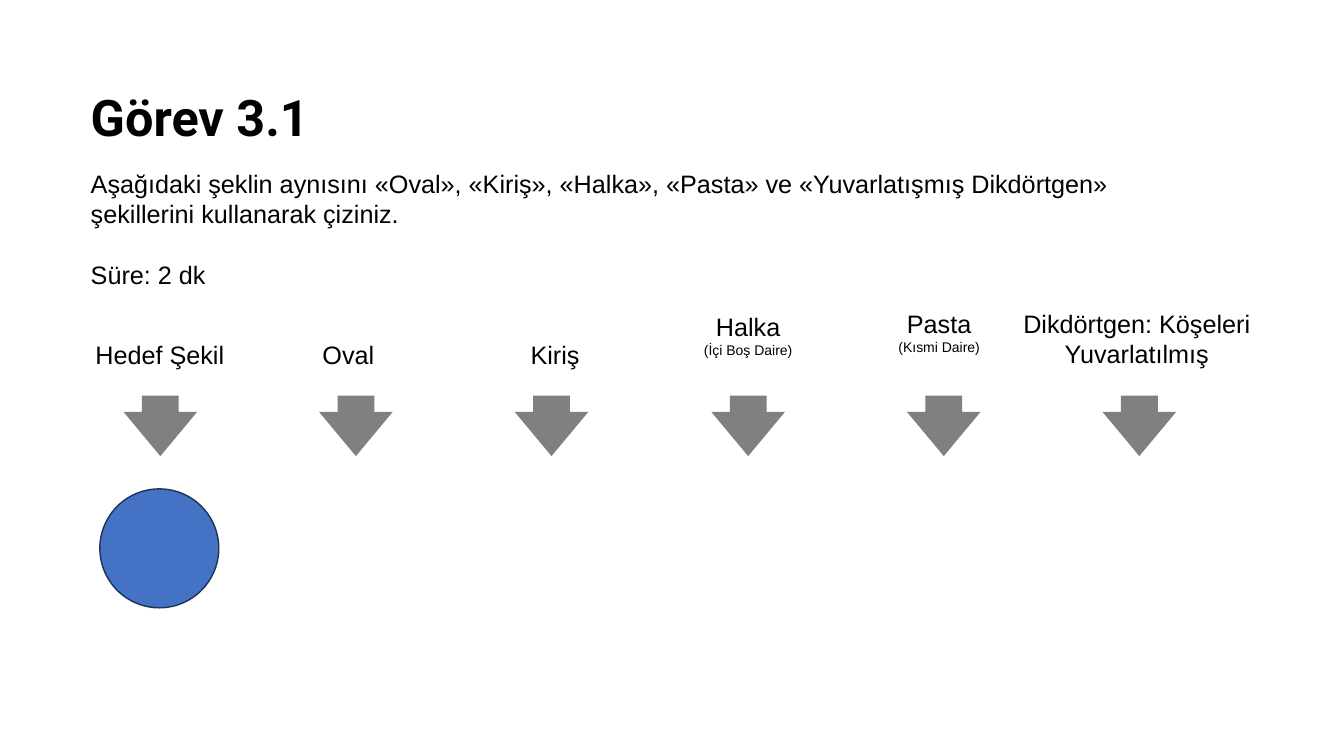
from lxml.etree import SubElement
from pptx import Presentation
from pptx.dml.color import RGBColor
from pptx.enum.shapes import MSO_SHAPE
from pptx.enum.text import MSO_ANCHOR, MSO_AUTO_SIZE, PP_ALIGN
from pptx.oxml.ns import qn
from pptx.util import Emu, Pt

BLACK = RGBColor(0x00, 0x00, 0x00)
BLUE = RGBColor(0x44, 0x72, 0xC4)
NAVY = RGBColor(0x1E, 0x32, 0x56)
GRAY = RGBColor(0x80, 0x80, 0x80)
EMU_PER_PX = 9144


def px(n):
    return Emu(n * EMU_PER_PX)


def add_text(tf, text, first=False, size=18, font="Arial", bold=False,
             align=PP_ALIGN.LEFT, before=0, bullet_off=False):
    p = tf.paragraphs[0] if first else tf.add_paragraph()
    if bullet_off:
        pPr = p._p.get_or_add_pPr()
        pPr.set("marL", "0")
        pPr.set("indent", "0")
        SubElement(pPr, qn("a:buNone"))
    p.alignment = align
    p.space_before = Pt(before)
    r = p.add_run()
    r.text = text
    r.font.size = Pt(size)
    r.font.name = font
    r.font.bold = bold
    r.font.color.rgb = BLACK


class SlideBuilder:
    def __init__(self, prs):
        self.slide = prs.slides.add_slide(prs.slide_layouts[1])

    def frame(self, sp, left, top, width, height):
        sp.left, sp.top, sp.width, sp.height = map(px, (left, top, width, height))
        tf = sp.text_frame
        tf.word_wrap = True
        tf.auto_size = MSO_AUTO_SIZE.NONE
        tf.vertical_anchor = MSO_ANCHOR.TOP
        return tf

    def title(self, text, *box):
        tf = self.frame(self.slide.shapes.title, *box)
        add_text(tf, text, first=True, size=36, font="Roboto", bold=True)

    def body(self, texts, *box):
        tf = self.frame(self.slide.placeholders[1], *box)
        for i, text in enumerate(texts):
            add_text(tf, text, first=i == 0, before=21.5 if i else 0, bullet_off=True)

    def label(self, text, note, *box):
        sp = self.slide.shapes.add_textbox(0, 0, 0, 0)
        tf = self.frame(sp, *box)
        add_text(tf, text, first=True, align=PP_ALIGN.CENTER)
        if note:
            add_text(tf, note, size=10, align=PP_ALIGN.CENTER)

    def shape(self, kind, fill, *box, line=None):
        sp = self.slide.shapes.add_shape(kind, *map(px, box))
        sp.shadow.inherit = False
        sp.fill.solid()
        sp.fill.fore_color.rgb = fill
        if line is None:
            sp.line.fill.background()
        else:
            sp.line.color.rgb = line
            sp.line.width = Pt(1)
        return sp

    def down_arrow(self, left, top):
        sp = self.shape(MSO_SHAPE.RIGHT_ARROW, GRAY, left, top, 60, 73)
        sp.adjustments[1] = 0.73
        sp.rotation = 90


def main():
    prs = Presentation()
    prs.slide_width, prs.slide_height = px(1333), px(750)
    s = SlideBuilder(prs)
    s.title("Görev 3.1", 80, 80, 345, 71)
    s.body([
        "Aşağıdaki şeklin aynısını «Oval», «Kiriş», «Halka», «Pasta» ve "
        "«Yuvarlatışmış Dikdörtgen» şekillerini kullanarak çiziniz.",
        "Süre: 2 dk",
    ], 80, 162, 1117, 131)
    s.shape(MSO_SHAPE.OVAL, BLUE, 99, 485, 118, 118, line=NAVY)

    labels = [
        ("Hedef Şekil", None, 80, 332, 157, 40),
        ("Oval", None, 285, 332, 121, 40),
        ("Kiriş", None, 490, 332, 121, 40),
        ("Halka", "(İçi Boş Daire)", 646, 304, 192, 57),
        ("Pasta", "(Kısmi Daire)", 843, 301, 177, 57),
        ("Dikdörtgen: Köşeleri Yuvarlatılmış", None, 1001, 301, 253, 71),
    ]
    first_arrow, last_arrow = 129, 1100
    for i, label in enumerate(labels):
        s.label(*label)
        left = first_arrow + round(i * (last_arrow - first_arrow) / (len(labels) - 1))
        s.down_arrow(left, 386)
    prs.save("out.pptx")


if __name__ == "__main__":
    main()
